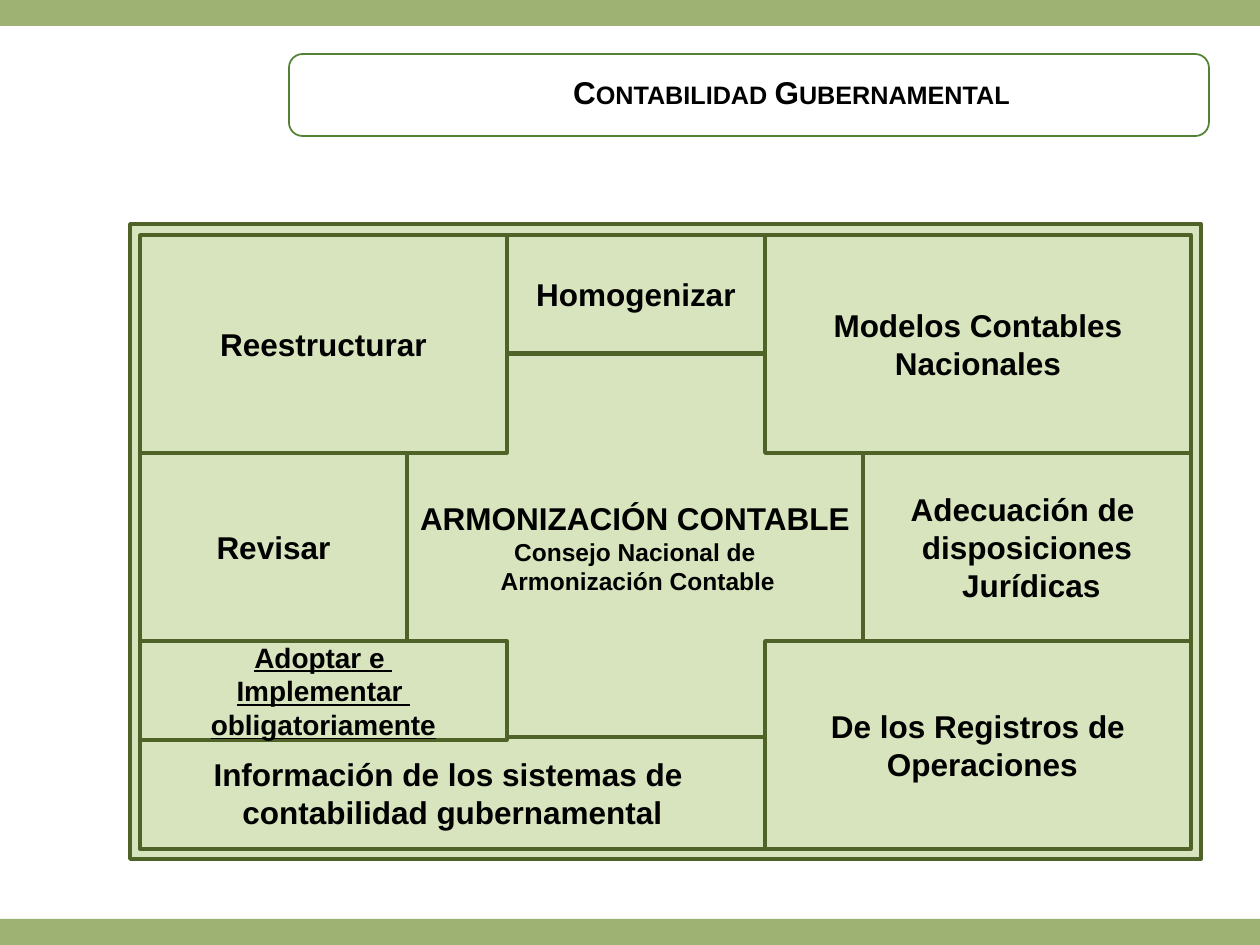
from lxml.etree import SubElement
from pptx import Presentation
from pptx.dml.color import RGBColor
from pptx.enum.shapes import MSO_SHAPE
from pptx.enum.text import MSO_ANCHOR, MSO_AUTO_SIZE, PP_ALIGN
from pptx.oxml.ns import qn
from pptx.util import Pt

SCALE = 914400 / 126
THEME = {
    "font": "Arial",
    "text": RGBColor.from_string("000000"),
    "band": RGBColor.from_string("77933C"),
    "title_line": RGBColor.from_string("548235"),
    "panel": RGBColor.from_string("D7E4BD"),
    "panel_line": RGBColor.from_string("4F6228"),
    "large": 18,
    "medium": 16,
    "small": 14,
}


def add_box(page, kind, bounds, fill, line, width):
    box = page.shapes.add_shape(kind, *[round(n * SCALE) for n in bounds])
    box.shadow.inherit = False
    for part, colour in ((box.fill, fill), (box.line.fill, line)):
        if colour is None:
            part.background()
        else:
            part.solid()
            part.fore_color.rgb = colour
    if line is not None:
        box.line.width = Pt(width)
    return box


def write_lines(box, lines, sizes, underline=None):
    frame = box.text_frame
    for name, value in {"word_wrap": False, "vertical_anchor": MSO_ANCHOR.MIDDLE}.items():
        setattr(frame, name, value)
    for index, line in enumerate(lines):
        para = frame.paragraphs[0] if index == 0 else frame.add_paragraph()
        para.alignment = PP_ALIGN.CENTER
        span = para.add_run()
        span.text = line
        size = sizes[min(index, len(sizes) - 1)]
        style = {"name": THEME["font"], "size": Pt(size), "bold": True, "underline": underline}
        for name, value in style.items():
            setattr(span.font, name, value)
        span.font.color.rgb = THEME["text"]


deck = Presentation()
deck.slide_width = round(1260 * SCALE)
deck.slide_height = round(945 * SCALE)
page = deck.slides.add_slide(deck.slide_layouts[5])

for top in (0, 919):
    band = add_box(page, MSO_SHAPE.RECTANGLE, (0, top, 1260, 26), THEME["band"], None, 0)
    colour = band.fill._xPr.find(qn("a:solidFill"))[0]
    SubElement(colour, qn("a:alpha"), val="71000")

add_box(page, MSO_SHAPE.ROUNDED_RECTANGLE, (289, 54, 920, 82), None, THEME["title_line"], 1)

panel_style = (THEME["panel"], THEME["panel_line"], 2)
add_box(page, MSO_SHAPE.RECTANGLE, (130, 224, 1071, 635), *panel_style)

cross = add_box(page, MSO_SHAPE.CROSS, (407, 354, 456, 387), *panel_style)
cross.adjustments[0] = 0.25
write_lines(
    cross,
    ["ARMONIZACIÓN CONTABLE", "Consejo Nacional de", " Armonización Contable"],
    [THEME["large"], THEME["small"]],
)

left, arm_left, core_left, core_right, arm_right, right = 140, 407, 507, 765, 863, 1191
top, arm_top, upper, lower, arm_bottom, bottom = 235, 353, 453, 641, 737, 849
large, medium = THEME["large"], THEME["medium"]
panels = [
    (core_left, top, core_right, arm_top, ["Homogenizar"], large, None),
    (core_right, top, right, upper, ["Modelos Contables", "Nacionales"], large, None),
    (arm_right, upper, right, lower, ["Adecuación de ", "disposiciones", " Jurídicas"], large, None),
    (core_right, lower, right, bottom, ["De los Registros de", " Operaciones"], large, None),
    (left, arm_bottom, core_right, bottom,
     ["Información de los sistemas de ", "contabilidad gubernamental"], large, None),
    (left, upper, arm_left, lower, ["Revisar"], large, None),
    (left, lower, core_left, 740, ["Adoptar e ", "Implementar ", "obligatoriamente"], medium, True),
    (left, top, core_left, upper, ["Reestructurar"], large, None),
]
for x1, y1, x2, y2, lines, size, underline in panels:
    panel = add_box(page, MSO_SHAPE.RECTANGLE, (x1, y1, x2 - x1, y2 - y1), *panel_style)
    write_lines(panel, lines, [size], underline)

title = page.shapes.title
for name, value in {"left": 558, "top": 67, "width": 467, "height": 50}.items():
    setattr(title, name, round(value * SCALE))
write_lines(title, ["Contabilidad Gubernamental"], [large])
title.text_frame.auto_size = MSO_AUTO_SIZE.SHAPE_TO_FIT_TEXT
title.text_frame.paragraphs[0].runs[0].font._element.set("cap", "small")

deck.save("out.pptx")
